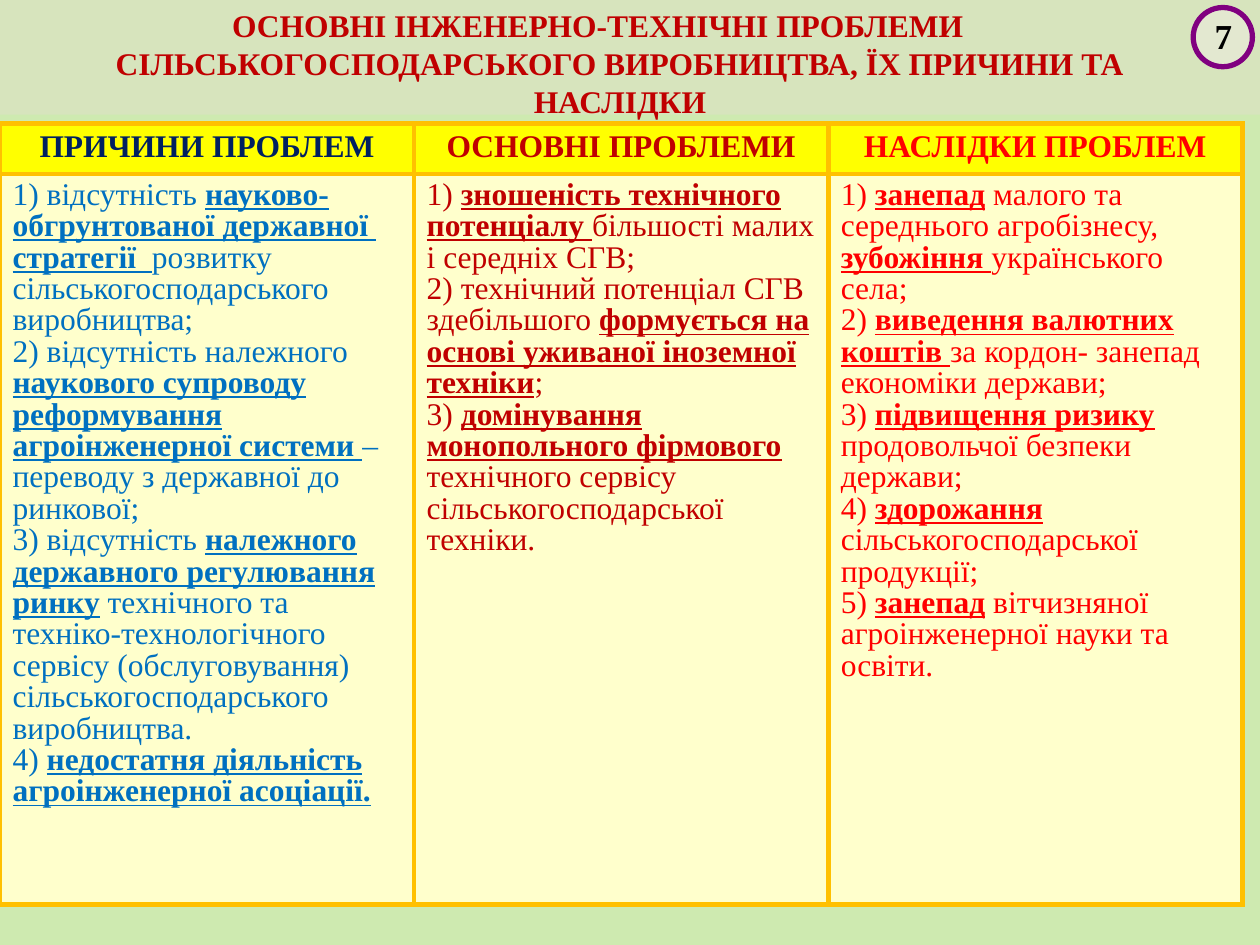
from lxml import etree
from pptx import Presentation
from pptx.dml.color import RGBColor
from pptx.enum.shapes import MSO_SHAPE
from pptx.enum.text import MSO_ANCHOR, PP_ALIGN
from pptx.oxml.ns import qn
from pptx.util import Inches, Pt

RECT, OVAL = MSO_SHAPE.RECTANGLE, MSO_SHAPE.OVAL
CENTER, MIDDLE = PP_ALIGN.CENTER, MSO_ANCHOR.MIDDLE

# Content: *...* is bold and underlined, a blank between stars is only underlined
TITLE = ("ОСНОВНІ ІНЖЕНЕРНО-ТЕХНІЧНІ ПРОБЛЕМИ СІЛЬСЬКОГОСПОДАРСЬКОГО "
         "ВИРОБНИЦТВА, ЇХ ПРИЧИНИ ТА НАСЛІДКИ")
NUMBER = "7"
COLUMNS = [
    ("ПРИЧИНИ ПРОБЛЕМ", "002060", "0070C0", [
        "1) відсутність *науково-обгрунтованої державної  стратегії**  *"
        "розвитку  сільськогосподарського виробництва;",
        "2) відсутність належного *наукового супроводу реформування "
        "агроінженерної системи *–  переводу з державної до ринкової;",
        "3) відсутність *належного державного регулювання ринку* технічного та "
        "техніко-технологічного сервісу (обслуговування) "
        "сільськогосподарського виробництва.",
        "4) *недостатня діяльність агроінженерної асоціації.*",
    ]),
    ("ОСНОВНІ ПРОБЛЕМИ", "C00000", "C00000", [
        "1) *зношеність технічного потенціалу *більшості малих і середніх СГВ;",
        "2) технічний потенціал СГВ здебільшого *формується на основі "
        "уживаної іноземної техніки*;",
        "3) *домінування монопольного фірмового** *технічного сервісу "
        "сільськогосподарської техніки.",
    ]),
    ("НАСЛІДКИ ПРОБЛЕМ", "FF0000", "FF0000", [
        "1) *занепад* малого та середнього агробізнесу, *зубожіння** *"
        "українського села;",
        "2) *виведення валютних коштів *за кордон- занепад економіки держави;",
        "3) *підвищення ризику *продовольчої безпеки держави;",
        "4) *здорожання* сільськогосподарської продукції;",
        "5) *занепад* вітчизняної агроінженерної науки та освіти.",
    ]),
]

THEME = {
    "font": "Times New Roman", "size": 18, "number_size": 20,
    "background": "CEEAB0", "band": "D7E4BD", "title": "C00000",
    "badge": "EEECE1", "badge_alpha": 55, "ring": "800080", "number": "000000",
    "header": "FFFF00", "body": "FFFFCC", "border": "FFC000", "line": 3,
}
TABLE_WIDTH = 9.86
ROW_HEIGHTS = [0.4, 5.8]


def rgb(name):
    return RGBColor.from_string(THEME.get(name, name))


def box(left, top, width, height):
    return [Inches(v) for v in (left, top, width, height)]


def fill_with(part, color):
    part.fill.solid()
    part.fill.fore_color.rgb = rgb(color)


def style_run(r, color, bold=True, underline=False, size=THEME["size"]):
    r.font.name, r.font.size = THEME["font"], Pt(size)
    r.font.bold, r.font.underline = bold, underline
    r.font.color.rgb = rgb(color)


def write_line(tf, text, color, size=THEME["size"]):
    tf.text = text
    p = tf.paragraphs[0]
    p.alignment = CENTER
    style_run(p.runs[0], color, size=size)
    return p


def write_points(tf, points, color):
    for i, point in enumerate(points):
        p = tf.add_paragraph() if i else tf.paragraphs[0]
        p.line_spacing = 0.9
        for j, part in enumerate(point.split("*")):
            if part:
                marked = j % 2 == 1
                r = p.add_run()
                r.text = part
                style_run(r, color, marked and bool(part.strip()), marked)


def add_borders(cell):
    tc_pr = cell._tc.get_or_add_tcPr()
    for side in ("a:lnL", "a:lnR", "a:lnT", "a:lnB"):
        ln = etree.SubElement(tc_pr, qn(side), w=str(Pt(THEME["line"])))
        solid = etree.SubElement(ln, qn("a:solidFill"))
        etree.SubElement(solid, qn("a:srgbClr"), val=THEME["border"])


prs = Presentation()
prs.slide_width, prs.slide_height = Inches(10), Inches(7.5)
s = prs.slides.add_slide(prs.slide_layouts[6])
fill_with(s.background, "background")

# Title band
band = s.shapes.add_shape(RECT, *box(0, 0, 10, 0.91))
band.shadow.inherit = False
fill_with(band, "band")
band.line.fill.background()

# Slide number badge
badge = s.shapes.add_group_shape()
ring = badge.shapes.add_shape(OVAL, *box(9.47, 0.06, 0.47, 0.47))
ring.shadow.inherit = False
fill_with(ring, "badge")
fill_color = ring._element.spPr.find(qn("a:solidFill"))[0]
etree.SubElement(fill_color, qn("a:alpha"), val=str(THEME["badge_alpha"] * 1000))
ring.line.color.rgb = rgb("ring")
ring.line.width = Pt(THEME["line"])
tf = badge.shapes.add_textbox(*box(9.57, 0.11, 0.28, 0.34)).text_frame
tf.margin_left = tf.margin_right = tf.margin_top = tf.margin_bottom = 0
tf.word_wrap, tf.vertical_anchor = False, MIDDLE
write_line(tf, NUMBER, "number", THEME["number_size"])

# Title
tf = s.shapes.add_textbox(*box(0, 0, 9.49, 1.01)).text_frame
tf.word_wrap = True
p_pr = write_line(tf, TITLE, "title")._p.get_or_add_pPr()
p_pr.set("marL", str(Inches(0.35)))
p_pr.set("indent", str(-Inches(0.35)))

# Table of causes, problems and consequences
table = s.shapes.add_table(len(ROW_HEIGHTS), len(COLUMNS),
                           *box(0, 0.98, TABLE_WIDTH, sum(ROW_HEIGHTS))).table
for row, height in zip(table.rows, ROW_HEIGHTS):
    row.height = Inches(height)
for i, (heading, heading_color, text_color, points) in enumerate(COLUMNS):
    table.columns[i].width = Inches(TABLE_WIDTH / len(COLUMNS))
    head, body = table.cell(0, i), table.cell(1, i)
    for cell, color in ((head, "header"), (body, "body")):
        add_borders(cell)
        fill_with(cell, color)
    write_line(head.text_frame, heading, heading_color)
    write_points(body.text_frame, points, text_color)

prs.save("out.pptx")
